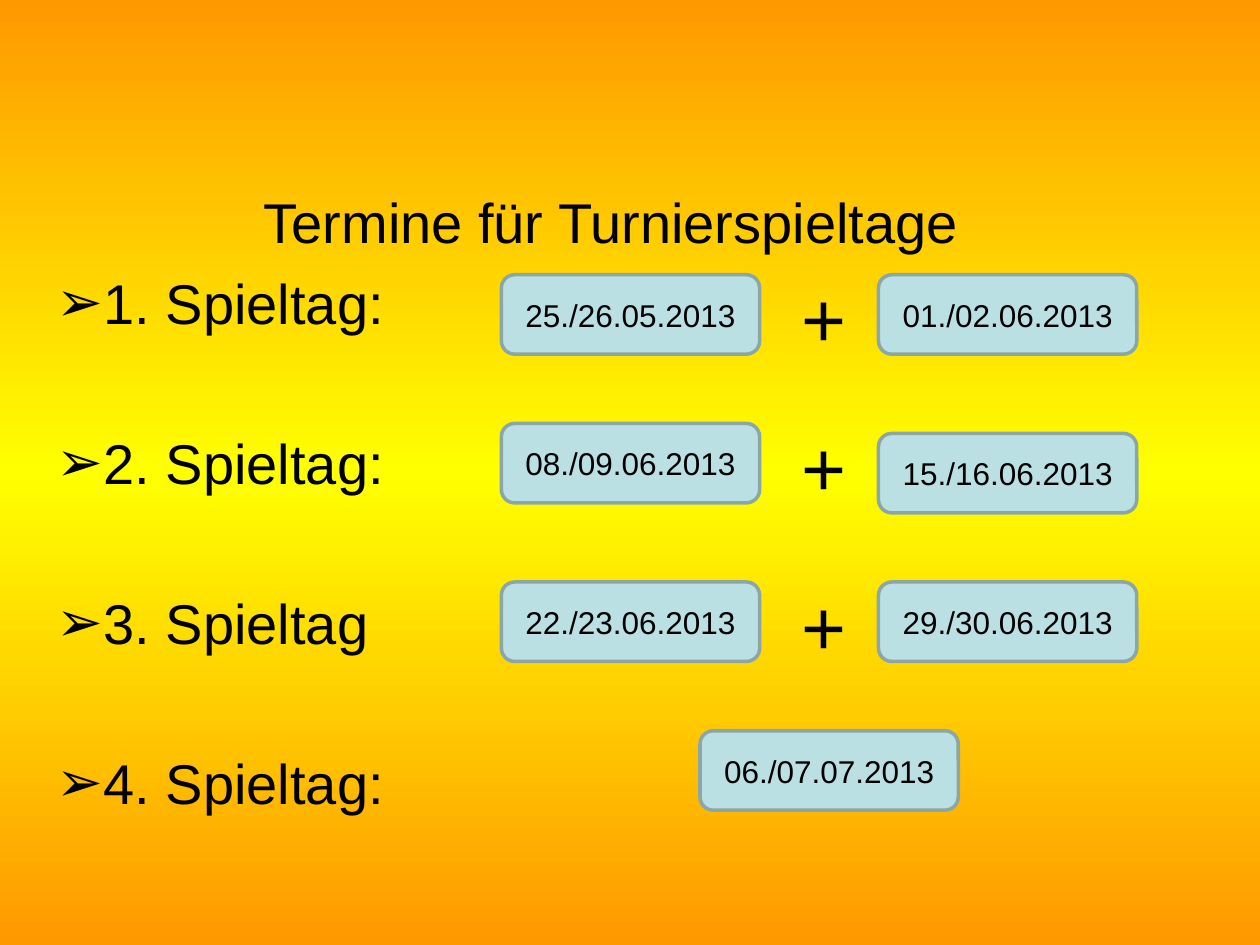
from copy import deepcopy

from pptx import Presentation
from pptx.dml.color import RGBColor
from pptx.enum import shapes, text
from pptx.oxml import parse_xml
from pptx.oxml.ns import nsdecls, qn
from pptx.util import Pt

TITLE = "Termine für Turnierspieltage"
MATCHDAYS = ["1. Spieltag:", "2. Spieltag:", "3. Spieltag", "4. Spieltag:"]
# Each date: text, left, top
DATES = [
    ("25./26.05.2013", 286.5, 157), ("01./02.06.2013", 502, 157),
    ("08./09.06.2013", 286.5, 242), ("15./16.06.2013", 502, 247.7),
    ("22./23.06.2013", 286.5, 332.6), ("29./30.06.2013", 502, 332.6),
    ("06./07.07.2013", 400, 417.6),
]
PLUS_TOPS = [151.2, 236.2, 326.8]

THEME = {
    "font": "Arial", "ink": RGBColor(0, 0, 0),
    "card": RGBColor(0xBB, 0xE0, 0xE3), "edge": RGBColor(0x8A, 0xA6, 0xA8),
    "background": ["FF9900", "FFFF00", "FF9900"],
    "body": Pt(32), "date": Pt(18), "plus": Pt(44),
}
CARD_SIZE = (Pt(147.6), Pt(45.4))
INDENT = Pt(27)
FIRST_GAP, MATCHDAY_GAP = Pt(8), Pt(53)


def write(paragraph, words, size, align=text.PP_ALIGN.LEFT):
    paragraph.text = words
    paragraph.alignment = align
    font_format = {"name": THEME["font"], "size": THEME[size]}
    for key, value in font_format.items():
        setattr(paragraph.font, key, value)
    paragraph.font.color.rgb = THEME["ink"]


def add_bullet(paragraph):
    properties = paragraph._p.get_or_add_pPr()
    properties.set("marL", str(INDENT))
    properties.set("indent", str(-INDENT))
    for tag in (f'<a:buFont {nsdecls("a")} typeface="{THEME["font"]}"/>',
                f'<a:buChar {nsdecls("a")} char="➢"/>'):
        properties.append(parse_xml(tag))


def paint_background(slide):
    fill = slide.background.fill
    fill.gradient()
    fill.gradient_angle = 90
    stop_list = slide.element.find(".//" + qn("a:gsLst"))
    stop_list.append(deepcopy(stop_list[-1]))
    for i, (stop, color) in enumerate(zip(fill.gradient_stops, THEME["background"])):
        stop.position = i / 2
        stop.color.rgb = RGBColor.from_string(color)


def add_schedule(slide):
    frame = slide.shapes.add_textbox(Pt(25.2), Pt(100), Pt(648), Pt(380)).text_frame
    frame.word_wrap = True
    frame.margin_top = Pt(7)
    write(frame.paragraphs[0], TITLE, "body", text.PP_ALIGN.CENTER)
    for i, matchday in enumerate(MATCHDAYS):
        paragraph = frame.add_paragraph()
        paragraph.space_before = MATCHDAY_GAP if i else FIRST_GAP
        add_bullet(paragraph)
        write(paragraph, matchday, "body")


def add_date(slide, date, left, top):
    card = slide.shapes.add_shape(
        shapes.MSO_SHAPE.ROUNDED_RECTANGLE, Pt(left), Pt(top), *CARD_SIZE)
    card.shadow.inherit = False
    card.fill.solid()
    card.fill.fore_color.rgb = THEME["card"]
    card.line.color.rgb = THEME["edge"]
    card.line.width = Pt(2)
    card.text_frame.vertical_anchor = text.MSO_ANCHOR.MIDDLE
    write(card.text_frame.paragraphs[0], date, "date", text.PP_ALIGN.CENTER)


def add_plus(slide, top):
    frame = slide.shapes.add_textbox(Pt(450.7), Pt(top), Pt(33.8), Pt(60.5)).text_frame
    frame.word_wrap = True
    frame.auto_size = text.MSO_AUTO_SIZE.SHAPE_TO_FIT_TEXT
    write(frame.paragraphs[0], "+", "plus")


def main():
    deck = Presentation()
    deck.slide_width, deck.slide_height = Pt(720), Pt(540)
    slide = deck.slides.add_slide(deck.slide_layouts[6])
    paint_background(slide)
    add_schedule(slide)
    for date in DATES:
        add_date(slide, *date)
    for top in PLUS_TOPS:
        add_plus(slide, top)
    deck.save("out.pptx")


if __name__ == "__main__":
    main()
